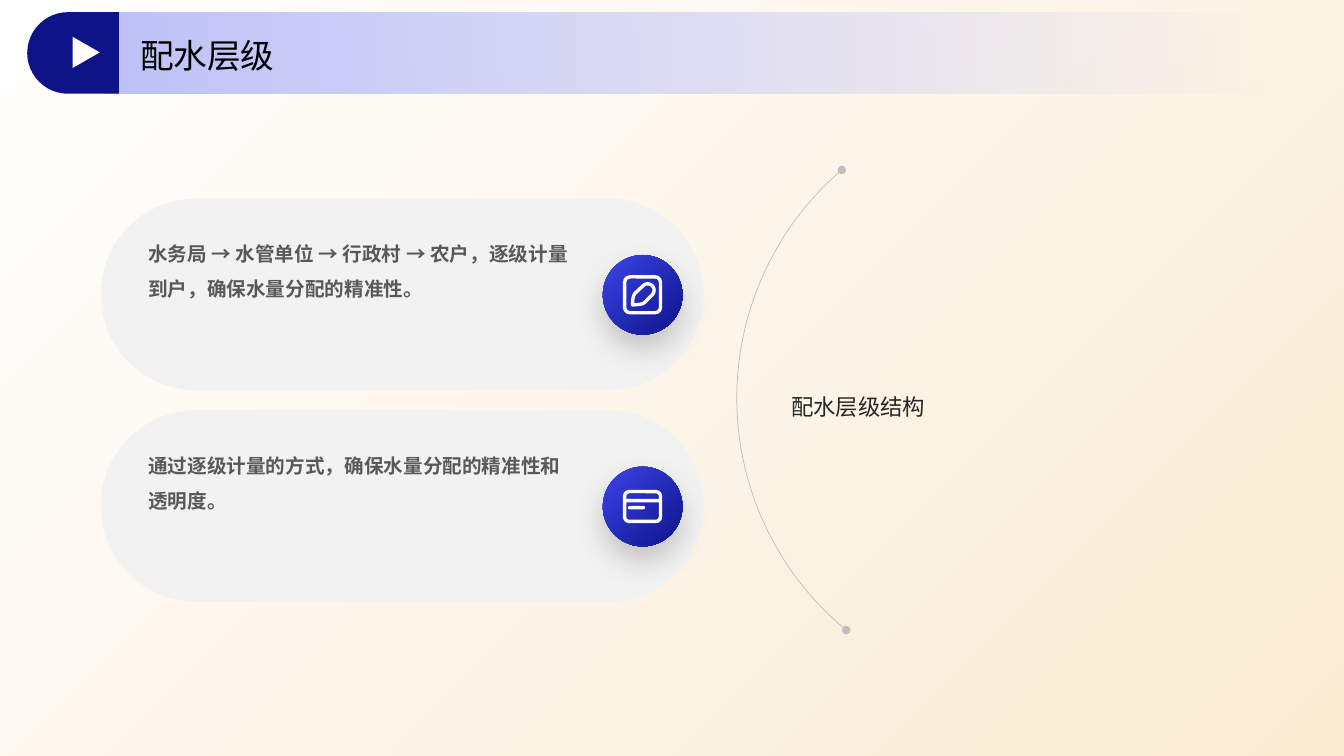
from dataclasses import dataclass
from lxml.etree import SubElement
from pptx import Presentation
from pptx.dml.color import RGBColor
from pptx.enum.shapes import MSO_SHAPE
from pptx.enum.text import MSO_ANCHOR, MSO_AUTO_SIZE, PP_ALIGN
from pptx.oxml.ns import qn
from pptx.util import Inches, Pt


@dataclass(frozen=True)
class Theme:
    font: str = "Noto Sans CJK SC"
    white: str = "FFFFFF"
    cream: str = "FAEBD3"
    pale: str = "BEC1F8"
    navy: str = "0E1488"
    blue: str = "3B44EB"
    card: str = "F2F2F2"
    rule: str = "BFBFBF"
    gray: str = "595959"
    dark: str = "262626"
    black: str = "000000"
    head: int = 24
    label: int = 16
    body: int = 14
    stroke: float = 2.4


LOOK = Theme()
CELL = Inches(0.1)
COLS, ROWS = 133.33, 75
PEN = [
    [(0.95, 2.95), (0.95, 2.45), (1.0, 2.05), (1.2, 1.8)],
    [(2.0, 1.05), (2.25, 0.8), (2.65, 0.8), (2.9, 1.05)],
    [(2.9, 1.05), (3.15, 1.3), (3.15, 1.7), (2.9, 1.95)],
    [(2.1, 2.75), (1.9, 2.9), (1.4, 2.95), (0.95, 2.95)],
]


def inner(box, x, y, wide, high):
    return box[0] + x, box[1] + y, wide, high


def cells(box):
    return [round(n * CELL) for n in box]


def tint(hue):
    return RGBColor.from_string(hue)


def draw(slide, kind, box, hue=None, turn=0, adj=()):
    shape = slide.shapes.add_shape(kind, *cells(box))
    shape.shadow.inherit = False
    shape.rotation = turn
    for i, value in enumerate(adj):
        shape.adjustments[i] = value
    shape.line.fill.background()
    if hue:
        shape.fill.solid()
        shape.fill.fore_color.rgb = tint(hue)
    else:
        shape.fill.background()
    return shape


def blend(shape, first, last, angle):
    shape.fill.gradient()
    shape.fill.gradient_angle = angle
    for stop, hue in zip(shape.fill.gradient_stops, (first, last)):
        stop.color.rgb = tint(hue)


def fade(color, share):
    SubElement(color, qn("a:alpha"), val=str(share * 1000))


def flip(shape):
    shape._element.spPr.xfrm.set("flipH", "1")


def ink(shape, hue, width):
    shape.line.color.rgb = tint(hue)
    shape.line.width = Pt(width)


def write(shape, text, size, hue, space, bold=False):
    frame = shape.text_frame
    frame.text = text
    frame.word_wrap = True
    frame.auto_size = MSO_AUTO_SIZE.NONE
    frame.vertical_anchor = MSO_ANCHOR.MIDDLE
    frame.margin_left = frame.margin_right = 0
    frame.margin_top = frame.margin_bottom = 0
    para = frame.paragraphs[0]
    para.alignment = PP_ALIGN.LEFT
    para.line_spacing = space
    font = para.runs[0].font
    font.name, font.size, font.bold = LOOK.font, Pt(size), bold
    font.color.rgb = tint(hue)
    SubElement(font._element, qn("a:ea"), typeface=LOOK.font)


def curve(a, b, c, d, steps=8):
    for i in range(steps + 1):
        t = i / steps
        u = 1 - t
        yield tuple(
            u**3 * p + 3 * u * u * t * q + 3 * u * t * t * r + t**3 * s
            for p, q, r, s in zip(a, b, c, d)
        )


def border(slide, box):
    gap = 0.17
    area = inner(box, gap, gap, box[2] - 2 * gap, box[3] - 2 * gap)
    shape = draw(slide, MSO_SHAPE.ROUNDED_RECTANGLE, area, adj=[0.15])
    ink(shape, LOOK.white, LOOK.stroke)


def pen(slide, box):
    border(slide, box)
    dots = [
        (round((box[0] + x) * CELL), round((box[1] + y) * CELL))
        for part in PEN for x, y in curve(*part)
    ]
    path = slide.shapes.build_freeform(*dots[0])
    path.add_line_segments(dots[1:])
    shape = path.convert_to_shape()
    shape.shadow.inherit = False
    shape.fill.background()
    ink(shape, LOOK.white, LOOK.stroke)


def sheet(slide, box):
    border(slide, box)
    draw(slide, MSO_SHAPE.RECTANGLE, inner(box, 0.2, 0.9, 3.5, 0.34), LOOK.white)
    draw(slide, MSO_SHAPE.ROUNDED_RECTANGLE, inner(box, 0.5, 1.6, 1.7, 0.34),
         LOOK.white, adj=[0.5])


def card(slide, box, text, icon, high):
    flip(draw(slide, MSO_SHAPE.ROUNDED_RECTANGLE, box, LOOK.card, adj=[0.5]))
    disc = inner(box, 49.8, 5.6, 7.9, 7.9)
    badge = draw(slide, MSO_SHAPE.OVAL, disc)
    blend(badge, LOOK.blue, LOOK.navy, 315)
    glow = SubElement(
        badge._element.spPr.find(qn("a:effectLst")), qn("a:outerShdw"),
        blurRad=str(Pt(20)), dist=str(Pt(10)), dir="5400000",
        algn="t", rotWithShape="0")
    fade(SubElement(glow, qn("a:srgbClr"), val=LOOK.gray), 30)
    note = slide.shapes.add_textbox(*cells(inner(box, 4.7, 3.1, 42.1, 7.1)))
    write(note, text, LOOK.body, LOOK.gray, 1.5, True)
    note.text_frame.auto_size = MSO_AUTO_SIZE.SHAPE_TO_FIT_TEXT
    icon(slide, inner(disc, 2, (disc[3] - high) / 2, 3.9, high))


def hub(slide, box, text):
    arc = draw(slide, MSO_SHAPE.ARC, box, adj=[186.34, 30.33])
    flip(arc)
    ink(arc, LOOK.rule, 0.5)
    for end in ("a:headEnd", "a:tailEnd"):
        SubElement(arc.line._ln, qn(end), type="oval")
    label = slide.shapes.add_textbox(*cells(inner(box, 5.4, 15.2, 47, 29.6)))
    write(label, text, LOOK.label, LOOK.dark, 1.5)


def banner(slide, box, text):
    bar = draw(slide, MSO_SHAPE.ROUNDED_RECTANGLE, inner(box, 6.8, 0, 116, box[3]))
    blend(bar, LOOK.pale, LOOK.pale, 0)
    fade(bar._element.spPr.findall(".//" + qn("a:srgbClr"))[-1], 0)
    title = slide.shapes.title
    title.left, title.top, title.width, title.height = cells(
        inner(box, 11.2, 1.4, 85.1, 5.4))
    write(title, text, LOOK.head, LOOK.black, 1.1)
    slide.shapes._spTree.append(title._element)
    draw(slide, MSO_SHAPE.ROUND_2_SAME_RECTANGLE, inner(box, 0.5, -0.5, 8.1, 9.1),
         LOOK.navy, 270, [0.5, 0])
    draw(slide, MSO_SHAPE.ISOSCELES_TRIANGLE, inner(box, 4.3, 2.65, 3.1, 2.7),
         LOOK.white, 90)


def main():
    deck = Presentation()
    deck.slide_width, deck.slide_height = cells((COLS, ROWS))
    slide = deck.slides.add_slide(deck.slide_layouts[5])
    back = draw(slide, MSO_SHAPE.RECTANGLE, (0, 0, COLS, ROWS))
    blend(back, LOOK.white, LOOK.cream, 315)
    hub(slide, (73.1, 9.7, 59.6, 59.6), "配水层级结构")
    items = [
        ("水务局 → 水管单位 → 行政村 → 农户，逐级计量到户，确保水量分配的精准性。", pen, 3.9),
        ("通过逐级计量的方式，确保水量分配的精准性和透明度。", sheet, 3.3),
    ]
    for row, item in enumerate(items):
        card(slide, (10, 19.7 + 21 * row, 59.8, 19), *item)
    banner(slide, (2.7, 1.2, 123.3, 8.1), "配水层级")
    deck.save("out.pptx")


if __name__ == "__main__":
    main()
